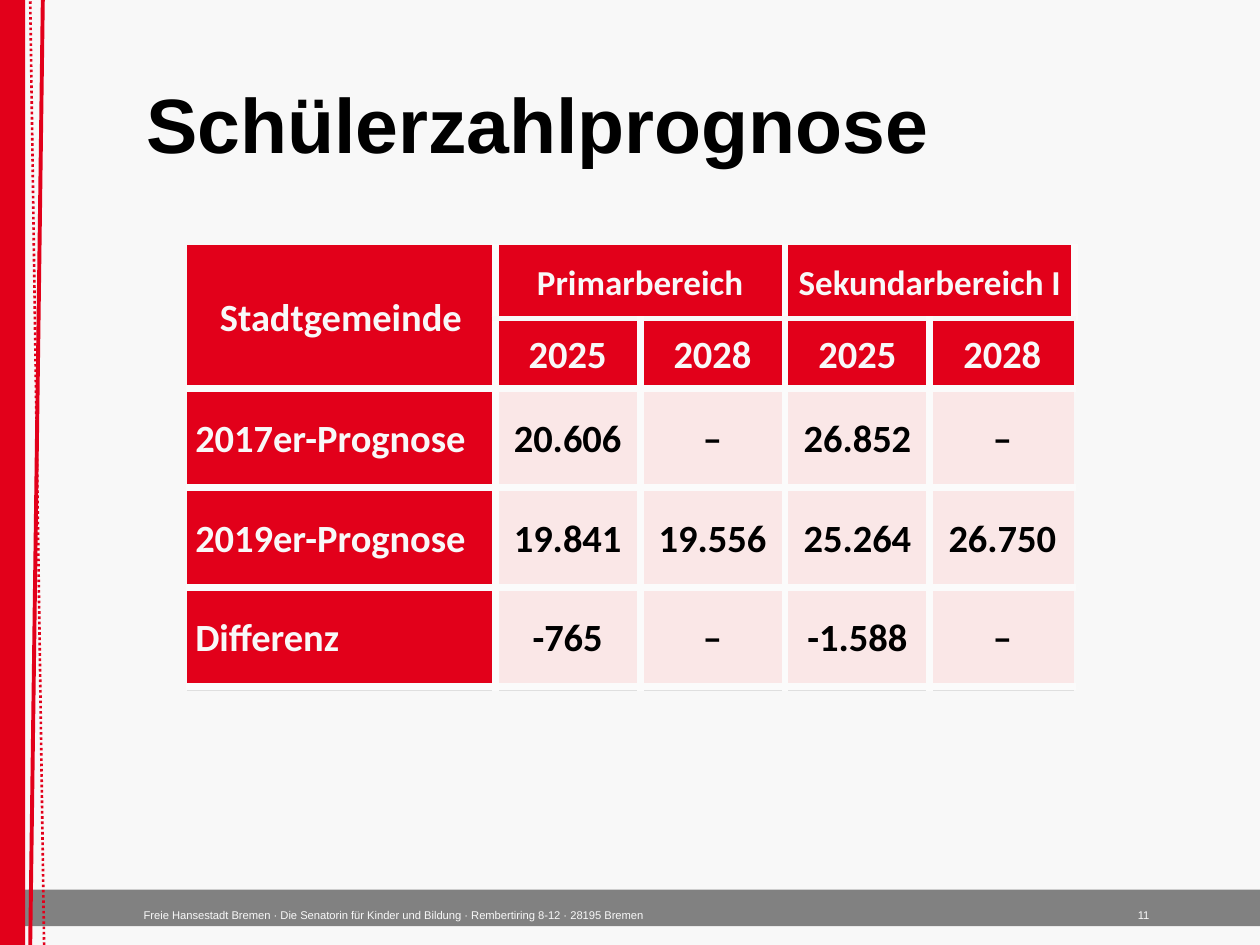
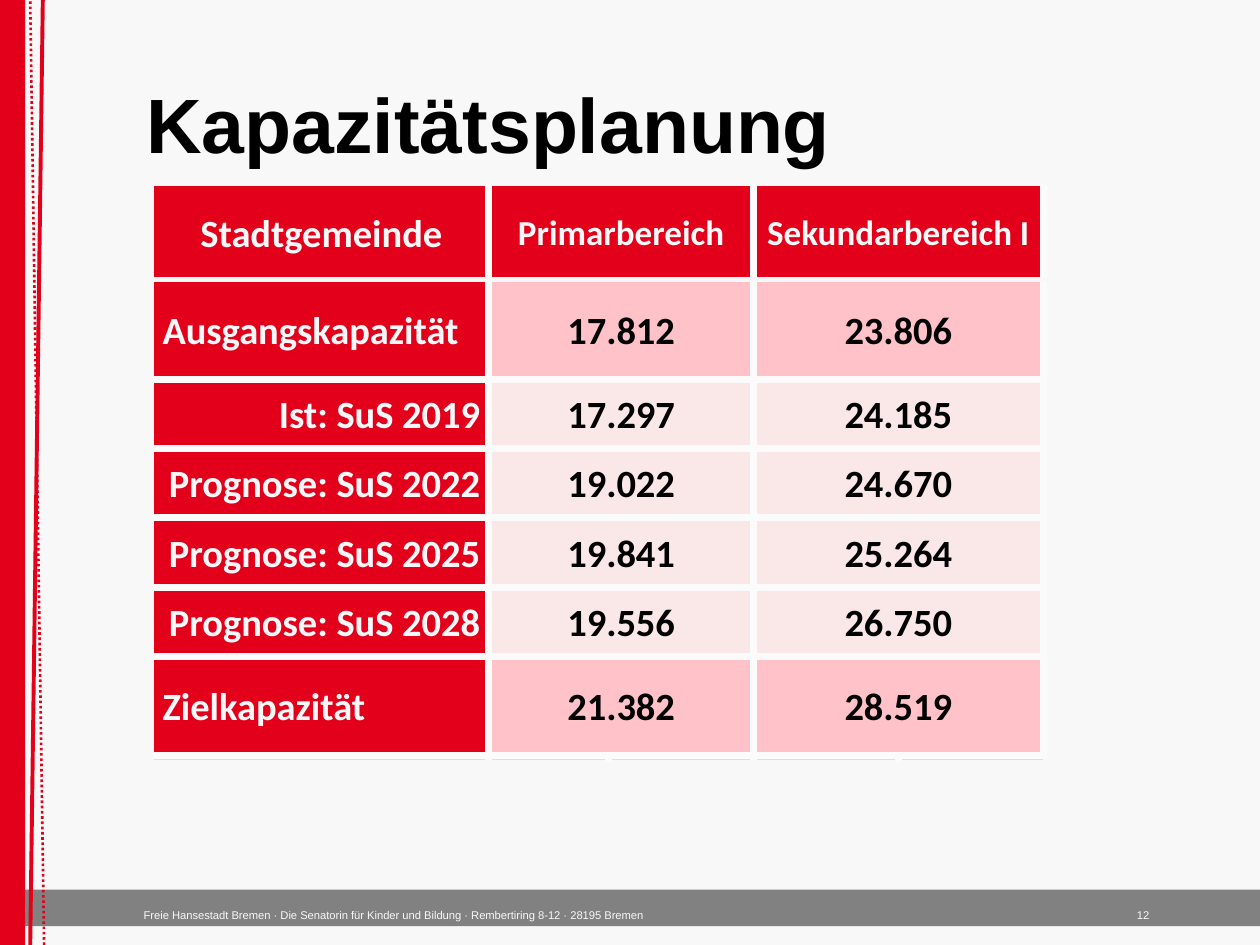
from lxml.etree import SubElement
from pptx import Presentation
from pptx.dml.color import RGBColor
from pptx.enum.dml import MSO_LINE
from pptx.enum.shapes import MSO_CONNECTOR, MSO_SHAPE
from pptx.enum.text import MSO_ANCHOR, PP_ALIGN
from pptx.oxml.ns import qn
from pptx.util import Inches, Pt

RED = RGBColor(0xE2, 0x00, 0x1A)
PINK = RGBColor(0xFF, 0xC2, 0xC9)
PALE = RGBColor(0xFA, 0xE7, 0xE7)
OFF_WHITE = RGBColor(0xF8, 0xF8, 0xF8)
GAP_WHITE = RGBColor(0xFB, 0xFB, 0xFB)
LIGHT_GREY = RGBColor(0xDF, 0xDF, 0xDF)
DARK_GREY = RGBColor(0x33, 0x33, 0x33)
BLACK = RGBColor(0, 0, 0)

FOOTER = ("Freie Hansestadt Bremen · Die Senatorin für Kinder und Bildung · "
          "Rembertiring 8-12 · 28195 Bremen")

ROW_FILLS = {"header": RED, "value": PALE, "detail": PALE, "capacity": PINK, "end": LIGHT_GREY}
LABEL_ALIGNMENTS = {"header": PP_ALIGN.CENTER, "detail": PP_ALIGN.RIGHT}

END_ROW = ("end", 0.04, ["", "", "", "", ""])

SLIDES = [
    {
        "title": "Schülerzahlprognose",
        "number": "11",
        "table_at": (1.48, 1.94),
        "columns": [2.45, 1.15, 1.15, 1.15, 1.15],
        "rows": [
            ("header", 0.59, ["Stadtgemeinde", "Primarbereich", None, "Sekundarbereich I", None]),
            ("header", 0.55, [None, "2025", "2028", "2025", "2028"]),
            ("value", 0.79, ["2017er-Prognose", "20.606", "–", "26.852", "–"]),
            ("value", 0.79, ["2019er-Prognose", "19.841", "19.556", "25.264", "26.750"]),
            ("value", 0.79, ["Differenz", "-765", "–", "-1.588", "–"]),
            END_ROW,
        ],
    },
    {
        "title": "Kapazitätsplanung",
        "number": "12",
        "table_at": (1.22, 1.47),
        "columns": [2.66, 0.95, 1.15, 1.15, 1.15],
        "rows": [
            ("header", 0.75, ["Stadtgemeinde", "Primarbereich", None, "Sekundarbereich I", None]),
            ("capacity", 0.79, ["Ausgangskapazität", "17.812", None, "23.806", None]),
            ("detail", 0.55, ["Ist: SuS 2019", "17.297", None, "24.185", None]),
            ("detail", 0.55, ["Prognose: SuS 2022", "19.022", None, "24.670", None]),
            ("detail", 0.55, ["Prognose: SuS 2025", "19.841", None, "25.264", None]),
            ("detail", 0.55, ["Prognose: SuS 2028", "19.556", None, "26.750", None]),
            ("capacity", 0.79, ["Zielkapazität", "21.382", None, "28.519", None]),
            END_ROW,
        ],
    },
]


def write_text(text_frame, text, *, size, color, font="Arial", bold=False,
               align=PP_ALIGN.LEFT, line_spacing=None, baseline=None):
    paragraph = text_frame.paragraphs[0]
    paragraph.alignment = align
    if line_spacing:
        paragraph.line_spacing = line_spacing
    run = paragraph.add_run()
    run.text = text
    run.font.size = Pt(size)
    run.font.name = font
    run.font.bold = bold
    run.font.color.rgb = color
    if baseline:
        run.font._element.set("baseline", str(baseline))


def add_rectangle(slide, left, top, width, height, color):
    shape = slide.shapes.add_shape(
        MSO_SHAPE.RECTANGLE, Inches(left), Inches(top), Inches(width), Inches(height))
    shape.shadow.inherit = False
    shape.fill.solid()
    shape.fill.fore_color.rgb = color
    shape.line.fill.background()
    return shape


def add_line(slide, start, end, width, dash=None):
    connector = slide.shapes.add_connector(
        MSO_CONNECTOR.STRAIGHT, *(Inches(value) for value in start + end))
    connector.line.color.rgb = RED
    connector.line.width = Pt(width)
    if dash:
        connector.line.dash_style = dash
    SubElement(connector._element.spPr, qn("a:effectLst"))


def add_frame(slide, number):
    band = add_rectangle(slide, 0, 7.06, 10, 0.29, DARK_GREY)
    band_color = band._element.spPr.find(qn("a:solidFill"))[0]
    SubElement(band_color, qn("a:alpha"), val="60000")
    band.text_frame.margin_left = Inches(1.14)
    band.text_frame.vertical_anchor = MSO_ANCHOR.TOP
    small = {"size": 11, "color": OFF_WHITE, "baseline": -25000}
    write_text(band.text_frame, FOOTER, **small)

    add_line(slide, (0.34, 0), (0.24, 7.5), 2.25)
    add_rectangle(slide, 0, 0, 0.2, 7.5, RED)
    add_line(slide, (0.35, 7.5), (0.24, 0), 1.5, MSO_LINE.ROUND_DOT)

    number_box = slide.shapes.add_textbox(Inches(8.15), Inches(7.06), Inches(1.07), Inches(0.29))
    number_box.text_frame.word_wrap = True
    write_text(number_box.text_frame, number, align=PP_ALIGN.RIGHT, **small)


def set_title(slide, text):
    title = slide.shapes.title
    title.left, title.top = Inches(1.06), Inches(0.44)
    title.width, title.height = Inches(8.42), Inches(1.16)
    title.text_frame.vertical_anchor = MSO_ANCHOR.MIDDLE
    write_text(title.text_frame, text, size=44, color=BLACK, bold=True, line_spacing=0.9)


def set_borders(cell, widths):
    properties = cell._tc.get_or_add_tcPr()
    for side, width in zip("LRTB", widths):
        line = SubElement(properties, qn(f"a:ln{side}"), w=str(Pt(width)))
        fill = SubElement(line, qn("a:solidFill"))
        color = OFF_WHITE if width < 4 else GAP_WHITE
        SubElement(fill, qn("a:srgbClr"), val=str(color))


def count_covered(cells):
    count = 0
    while count < len(cells) and cells[count] is None:
        count += 1
    return count


def add_figures_table(slide, table_at, columns, rows):
    left, top = table_at
    heights = [height for _, height, _ in rows]
    table = slide.shapes.add_table(
        len(rows), len(columns), Inches(left), Inches(top),
        Inches(sum(columns)), Inches(sum(heights))).table
    table.first_row = table.horz_banding = False
    for column, width in zip(table.columns, columns):
        column.width = Inches(width)
    for row, height in zip(table.rows, heights):
        row.height = Inches(height)

    column_lines = [1] + [4.5] * (len(columns) - 1) + [1]
    row_lines = [1, 3] + [4.5] * (len(rows) - 2) + [1]
    for row_index, (kind, _, texts) in enumerate(rows):
        for column_index, text in enumerate(texts):
            cell = table.cell(row_index, column_index)
            cell.margin_left = cell.margin_right = Inches(0.07)
            cell.margin_top = cell.margin_bottom = 0
            cell.vertical_anchor = MSO_ANCHOR.MIDDLE
            set_borders(cell, column_lines[column_index:column_index + 2]
                        + row_lines[row_index:row_index + 2])
            is_label = column_index == 0 and kind != "end"
            cell.fill.solid()
            cell.fill.fore_color.rgb = RED if is_label else ROW_FILLS[kind]
            if not text:
                SubElement(cell.text_frame.paragraphs[0]._p, qn("a:endParaRPr"), sz="100")
                continue
            on_red = is_label or kind == "header"
            is_school_level = row_index == 0 and not is_label
            align = LABEL_ALIGNMENTS.get(kind, PP_ALIGN.LEFT) if is_label else PP_ALIGN.CENTER
            write_text(cell.text_frame, text, size=20 if is_school_level else 22,
                       color=OFF_WHITE if on_red else BLACK, font="Calibri",
                       bold=True, align=align, line_spacing=1.07)
            right = column_index + count_covered(texts[column_index + 1:])
            below = [cells[column_index] for _, _, cells in rows[row_index + 1:]]
            bottom = row_index + count_covered(below)
            if (bottom, right) != (row_index, column_index):
                cell.merge(table.cell(bottom, right))


def main():
    presentation = Presentation()
    presentation.slide_width, presentation.slide_height = Inches(10), Inches(7.5)
    background = presentation.slide_master.background.fill
    background.solid()
    background.fore_color.rgb = OFF_WHITE
    for content in SLIDES:
        slide = presentation.slides.add_slide(presentation.slide_layouts[5])
        add_frame(slide, content["number"])
        set_title(slide, content["title"])
        add_figures_table(slide, content["table_at"], content["columns"], content["rows"])
    presentation.save("out.pptx")


if __name__ == "__main__":
    main()
